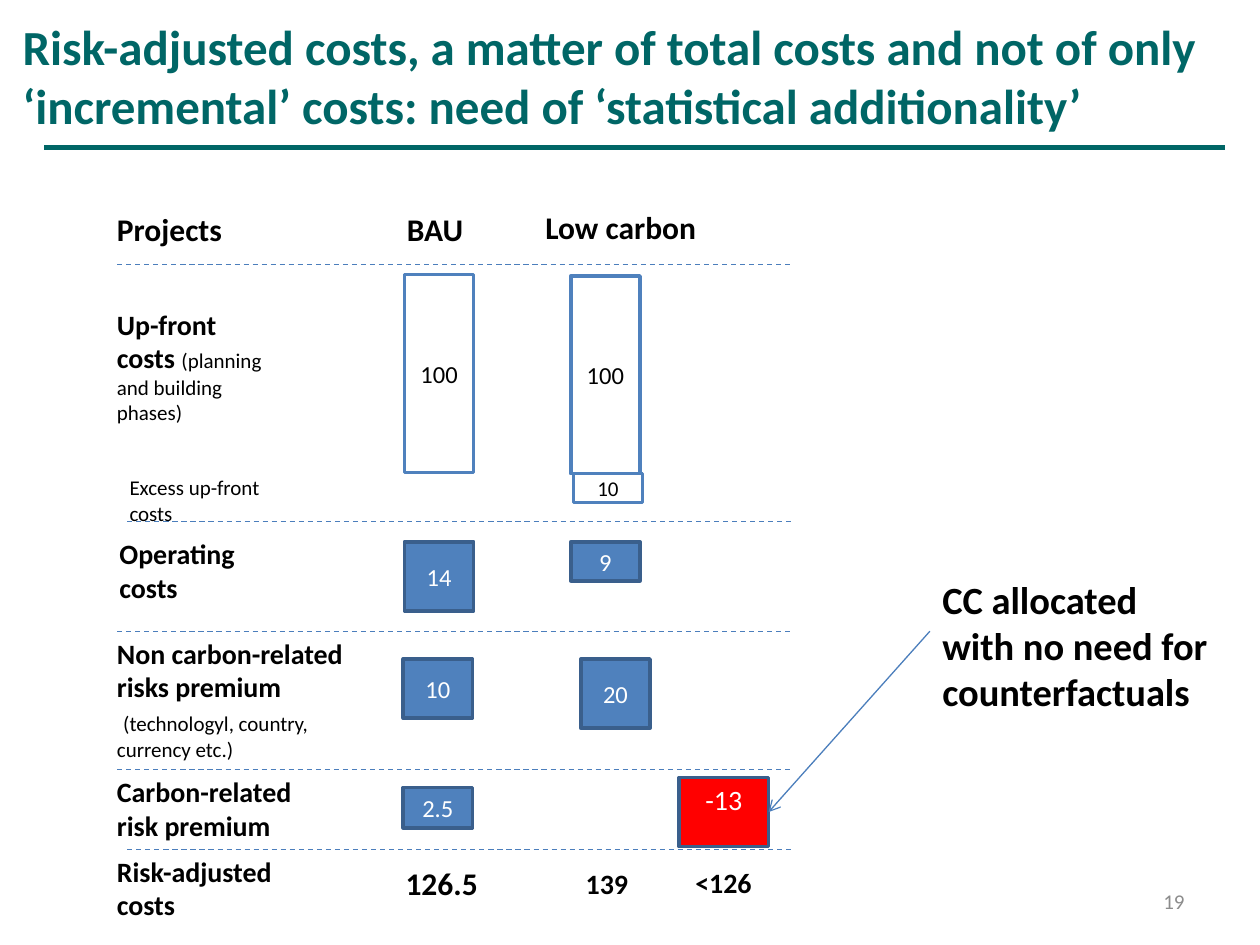
from lxml import etree
from pptx import Presentation
from pptx.dml.color import RGBColor
from pptx.enum.dml import MSO_LINE
from pptx.enum.shapes import MSO_CONNECTOR, MSO_SHAPE
from pptx.enum.text import MSO_ANCHOR, MSO_AUTO_SIZE, PP_ALIGN
from pptx.oxml.ns import qn
from pptx.util import Inches, Pt

COLORS = {k: RGBColor.from_string(v) for k, v in {
    "teal": "006666", "black": "000000", "white": "FFFFFF", "gray": "8C8C8C",
    "blue": "4F81BD", "edge": "3A5F8C", "rule": "4B7EBC", "red": "FF0000",
}.items()}


def write(tf, paragraphs, color="black", align=PP_ALIGN.LEFT):
    """Fill a frame; each paragraph is a list of (text, size, bold) runs."""
    tf.word_wrap = True
    for i, runs in enumerate(paragraphs):
        p = tf.paragraphs[0] if i == 0 else tf.add_paragraph()
        p.alignment = align
        p.font.name = "Calibri"
        p.font.color.rgb = COLORS[color]
        for text, size, bold in runs:
            r = p.add_run()
            r.text = text
            r.font.size, r.font.bold = Pt(size), bold


def add_line(x1, y1, x2, y2, color="rule", width=0.75, dash=None):
    line = s.shapes.add_connector(
        MSO_CONNECTOR.STRAIGHT, Inches(x1), Inches(y1), Inches(x2), Inches(y2))
    line.line.color.rgb = COLORS[color]
    line.line.width = Pt(width)
    if dash:
        line.line.dash_style = dash
    etree.SubElement(line._element.spPr, qn("a:effectLst"))
    return line


prs = Presentation()
prs.slide_width, prs.slide_height = Inches(10), Inches(7.5)
s = prs.slides.add_slide(prs.slide_layouts[5])

# Title and its underline
title = s.shapes.title
title.left, title.top = Inches(0.08), Inches(0.08)
title.width, title.height = Inches(9.76), Inches(1.04)
title.text_frame.auto_size = MSO_AUTO_SIZE.NONE
title.text_frame.vertical_anchor = MSO_ANCHOR.TOP
write(title.text_frame, [[(
    "Risk-adjusted costs, a matter of total costs and not of only "
    "‘incremental’ costs: need of ‘statistical additionality’", 28, True)]], "teal")
add_line(0.35, 1.17, 9.72, 1.17, "teal", 2.5)

# Row separators
for x, y in [(0.93, 2.1), (1.01, 4.14), (0.93, 5.01), (0.93, 6.11), (1.01, 6.74)]:
    add_line(x, y, 6.28, y, dash=MSO_LINE.DASH)
add_line(4.55, 3.75, 5.1, 3.75, dash=MSO_LINE.SQUARE_DOT)

# Headings, row labels, totals and the comment
labels = [
    (0.83, 1.62, 1.34, 0.4, [[("Projects", 18, True)]]),
    (3.13, 1.62, 0.71, 0.4, [[("BAU", 18, True)]]),
    (4.23, 1.6, 1.5, 0.4, [[("Low carbon", 18, True)]]),
    (0.83, 2.39, 1.44, 1.04, [[("Up-front costs ", 16, True),
                               ("(planning and building phases)", 12, False)]]),
    (0.93, 3.72, 1.26, 0.5, [[("Excess up-front costs", 12, False)]]),
    (0.85, 4.21, 1.44, 0.64, [[("Operating costs", 16, True)]]),
    (0.83, 5, 2.14, 1.11, [[("Non carbon-related risks premium", 16, True)],
                           [(" ", 16, False),
                            ("(technologyl, country, currency etc.)", 12, False)]]),
    (0.83, 6.1, 1.69, 0.64, [[("Carbon-related risk premium", 16, True)]]),
    (0.83, 6.73, 1.86, 0.64, [[("Risk-adjusted costs", 16, True)]]),
    (3.12, 6.81, 0.79, 0.4, [[("126.5", 18, True)]]),
    (4.55, 6.83, 0.79, 0.37, [[("139", 16, True)]]),
    (5.42, 6.82, 0.79, 0.37, [[("<126", 16, True)]]),
    (7.38, 4.52, 2.38, 1.21, [[("CC allocated with no need for", 22, True)],
                              [("counterfactuals", 22, True)]]),
]
for x, y, w, h, paragraphs in labels:
    tb = s.shapes.add_textbox(Inches(x), Inches(y), Inches(w), Inches(h))
    write(tb.text_frame, paragraphs)

# Cost bars: an unfilled bar has black text and a lighter outline
bars = [
    (3.21, 2.18, 0.55, 1.57, "100", 14, None),
    (4.53, 2.19, 0.55, 1.57, "100", 14, None),
    (4.55, 3.76, 0.55, 0.23, "10", 12, None),
    (3.21, 4.3, 0.55, 0.55, "14", 14, "blue"),
    (4.53, 4.3, 0.55, 0.31, "9", 14, "blue"),
    (3.2, 5.23, 0.55, 0.47, "10", 14, "blue"),
    (4.61, 5.23, 0.55, 0.55, "20", 14, "blue"),
    (3.2, 6.25, 0.55, 0.32, "2.5", 14, "blue"),
    (5.39, 6.17, 0.71, 0.55, "-13", 16, "red"),
]
for x, y, w, h, value, size, fill in bars:
    bar = s.shapes.add_shape(
        MSO_SHAPE.RECTANGLE, Inches(x), Inches(y), Inches(w), Inches(h))
    bar.shadow.inherit = False
    if fill:
        bar.fill.solid()
        bar.fill.fore_color.rgb = COLORS[fill]
    else:
        bar.fill.background()
    bar.line.color.rgb = COLORS["edge" if fill else "blue"]
    bar.line.width = Pt(2)
    bar.text_frame.vertical_anchor = MSO_ANCHOR.MIDDLE
    write(bar.text_frame, [[(value, size, False)]],
          "white" if fill else "black", PP_ALIGN.CENTER)

# The last bar is the red one: raise its value and point the comment at it
bar.text_frame.margin_bottom = Inches(0.25)
arrow = add_line(7.38, 5.01, 6.1, 6.44)
arrow.end_connect(bar, 3)
etree.SubElement(arrow.line._get_or_add_ln(), qn("a:tailEnd"), type="arrow")

number = s.shapes.add_textbox(Inches(7.17), Inches(6.95), Inches(2.33), Inches(0.4))
number.text_frame.vertical_anchor = MSO_ANCHOR.MIDDLE
write(number.text_frame, [[("19", 12, False)]], "gray", PP_ALIGN.RIGHT)

prs.save("out.pptx")
